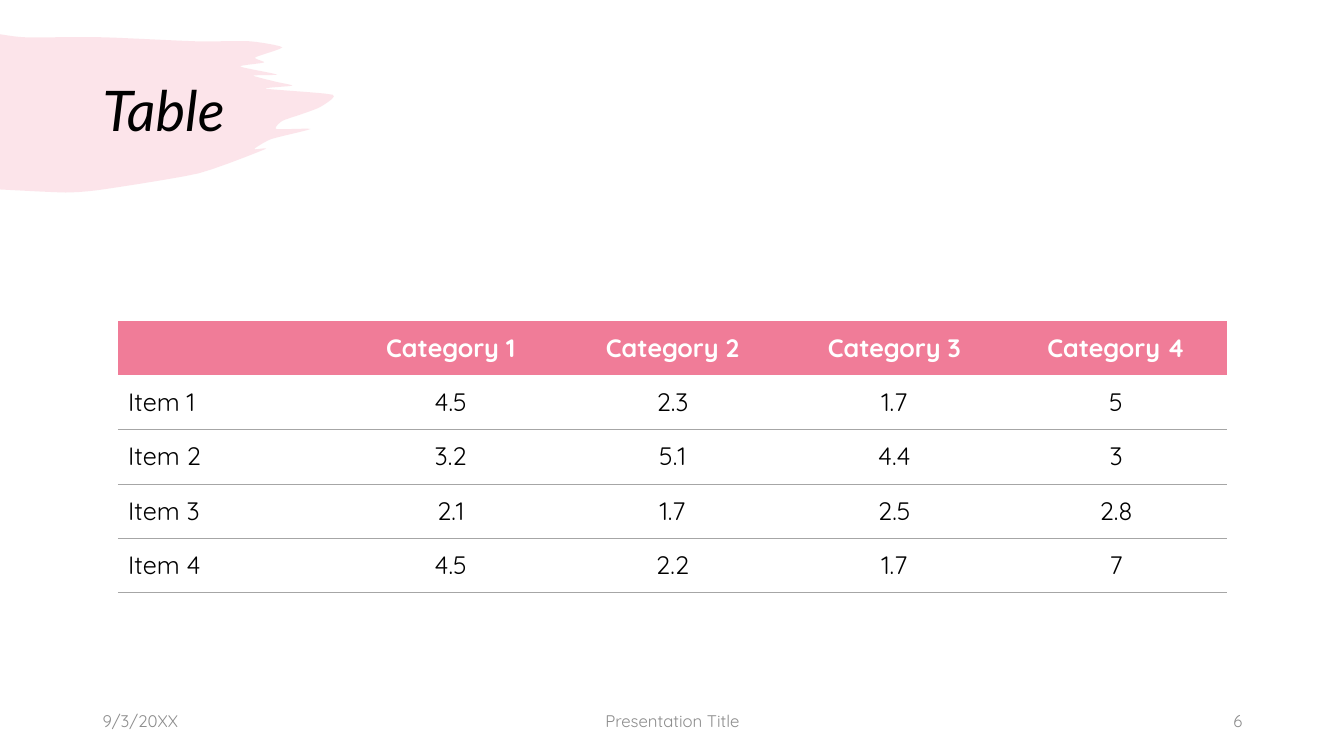
import dataclasses
import typing

import pptx
import pptx.dml.color
import pptx.enum.text
import pptx.oxml
import pptx.oxml.ns
import pptx.util

PX = 9144
PINK, GREY, RULE, BLACK, WHITE = "F07C98", "8C8C8C", "A6A6A6", "000000", "FFFFFF"
ALIGN = pptx.enum.text.PP_ALIGN
MIDDLE = pptx.enum.text.MSO_ANCHOR.MIDDLE
PLAIN_STYLE = "{2D5ABB26-0587-4C30-8999-92F81FD0307C}"
CURVE_STEPS = 5
TENSION = 0.3

Point = tuple[float, float]


@dataclasses.dataclass(frozen=True)
class TextStyle:
    color: str
    font: dict[str, typing.Any]
    align: ALIGN = ALIGN.LEFT
    spacing: float = 1.0


@dataclasses.dataclass(frozen=True)
class Label:
    text: str
    left: int
    top: int
    width: int
    height: int
    style: TextStyle


def quicksand(size: int, bold: bool = False) -> dict[str, typing.Any]:
    return {"name": "Quicksand", "size": pptx.util.Pt(size), "bold": bold}


TITLE_STYLE = TextStyle(
    BLACK, {"name": "Lato", "size": pptx.util.Pt(40), "italic": True}, spacing=0.9
)
HEADER_STYLE = TextStyle(WHITE, quicksand(18, True), ALIGN.CENTER)
ITEM_STYLE = TextStyle(BLACK, quicksand(18))
VALUE_STYLE = TextStyle(BLACK, quicksand(18), ALIGN.CENTER)


def footer(text: str, left: int, width: int, align: ALIGN) -> Label:
    return Label(text, left, 695, width, 40, TextStyle(GREY, quicksand(12), align))


LABELS = [
    Label("Table", 92, 40, 1150, 145, TITLE_STYLE),
    footer("9/3/20XX", 92, 300, ALIGN.LEFT),
    footer("Presentation Title", 442, 450, ALIGN.CENTER),
    footer("6", 942, 300, ALIGN.RIGHT),
]

CATEGORIES = ["", *(f"Category {number}" for number in range(1, 5))]
VALUES = ["4.5 2.3 1.7 5", "3.2 5.1 4.4 3", "2.1 1.7 2.5 2.8", "4.5 2.2 1.7 7"]
ROWS = [CATEGORIES] + [
    [f"Item {number}", *values.split()] for number, values in enumerate(VALUES, 1)
]
TABLE_LEFT, TABLE_TOP, COLUMN_WIDTH, ROW_HEIGHT = 117, 318, 220, 54

BRUSH_KNOTS: list[Point] = [
    (0, 34), (25, 37), (102, 37), (194, 41), (248, 41), (280, 47), (253, 57),
    (262, 62), (238, 66), (275, 74), (251, 75), (273, 81), (290, 85), (263, 88),
    (330, 94), (318, 106), (300, 113), (280, 120), (274, 128), (308, 128),
    (269, 138), (252, 148), (263, 148), (197, 172), (102, 188), (65, 191), (0, 188),
]


def emu(length: float) -> int:
    return round(length * PX)


def rgb(color: str) -> pptx.dml.color.RGBColor:
    return pptx.dml.color.RGBColor.from_string(color)


def apply_formats(target: typing.Any, formats: dict[str, typing.Any]) -> None:
    for name, value in formats.items():
        setattr(target, name, value)


def write_text(frame: typing.Any, text: str, style: TextStyle) -> None:
    para = frame.paragraphs[0]
    apply_formats(para, {"alignment": style.align, "line_spacing": style.spacing})
    span = para.add_run()
    span.text = text
    apply_formats(span.font, style.font)
    span.font.color.rgb = rgb(style.color)


def draw_label(page: typing.Any, label: Label) -> None:
    box = page.shapes.add_textbox(
        *map(emu, (label.left, label.top, label.width, label.height))
    )
    apply_formats(box.text_frame, {"word_wrap": True, "vertical_anchor": MIDDLE})
    write_text(box.text_frame, label.text, label.style)


def blend(before: float, start: float, end: float, after: float, t: float) -> float:
    leave, arrive = TENSION * (end - before), TENSION * (after - start)
    ease = t * t * (3 - 2 * t)
    bend = t * (1 - t) * ((1 - t) * leave - t * arrive)
    return start + (end - start) * ease + bend


def smooth_outline(knots: list[Point]) -> list[Point]:
    padded = [knots[0], *knots, knots[-1]]
    points = [knots[0]]
    for window in zip(padded, padded[1:], padded[2:], padded[3:]):
        xs, ys = zip(*window)
        for step in range(1, CURVE_STEPS + 1):
            t = step / CURVE_STEPS
            points.append((blend(*xs, t), blend(*ys, t)))
    return points


def draw_brush(page: typing.Any) -> None:
    start, *outline = [(emu(x), emu(y)) for x, y in smooth_outline(BRUSH_KNOTS)]
    builder = page.shapes.build_freeform(*start)
    builder.add_line_segments(outline)
    brush = builder.convert_to_shape()
    brush.shadow.inherit = False
    brush.line.fill.background()
    brush.fill.solid()
    brush.fill.fore_color.rgb = rgb(PINK)
    tint = brush.fill._xPr.find(".//" + pptx.oxml.ns.qn("a:srgbClr"))
    tint.append(pptx.oxml.parse_xml(f'<a:alpha {pptx.oxml.ns.nsdecls("a")} val="20000"/>'))


def rule_below(cell: typing.Any) -> None:
    border = pptx.oxml.parse_xml(
        f'<a:lnB {pptx.oxml.ns.nsdecls("a")} w="{pptx.util.Pt(0.25)}">'
        f'<a:solidFill><a:srgbClr val="{RULE}"/></a:solidFill></a:lnB>'
    )
    cell._tc.get_or_add_tcPr().insert(0, border)


def draw_table(page: typing.Any) -> None:
    columns = len(CATEGORIES)
    size = (columns * COLUMN_WIDTH, len(ROWS) * ROW_HEIGHT)
    frame = page.shapes.add_table(
        len(ROWS), columns, *map(emu, (TABLE_LEFT, TABLE_TOP, *size))
    )
    table = frame.table
    apply_formats(table, {"first_row": True, "horz_banding": False})
    table._tbl.tblPr.find(pptx.oxml.ns.qn("a:tableStyleId")).text = PLAIN_STYLE
    for row, texts in enumerate(ROWS):
        for column, text in enumerate(texts):
            cell = table.cell(row, column)
            cell.vertical_anchor = MIDDLE
            if row == 0:
                cell.fill.solid()
                cell.fill.fore_color.rgb = rgb(PINK)
            else:
                cell.fill.background()
                rule_below(cell)
            body = VALUE_STYLE if column else ITEM_STYLE
            if text:
                write_text(cell.text_frame, text, body if row else HEADER_STYLE)


def main() -> None:
    deck = pptx.Presentation()
    apply_formats(deck, {"slide_width": emu(1333), "slide_height": emu(750)})
    page = deck.slides.add_slide(deck.slide_layouts[6])
    draw_brush(page)
    draw_table(page)
    for label in LABELS:
        draw_label(page, label)
    deck.save("out.pptx")


if __name__ == "__main__":
    main()
